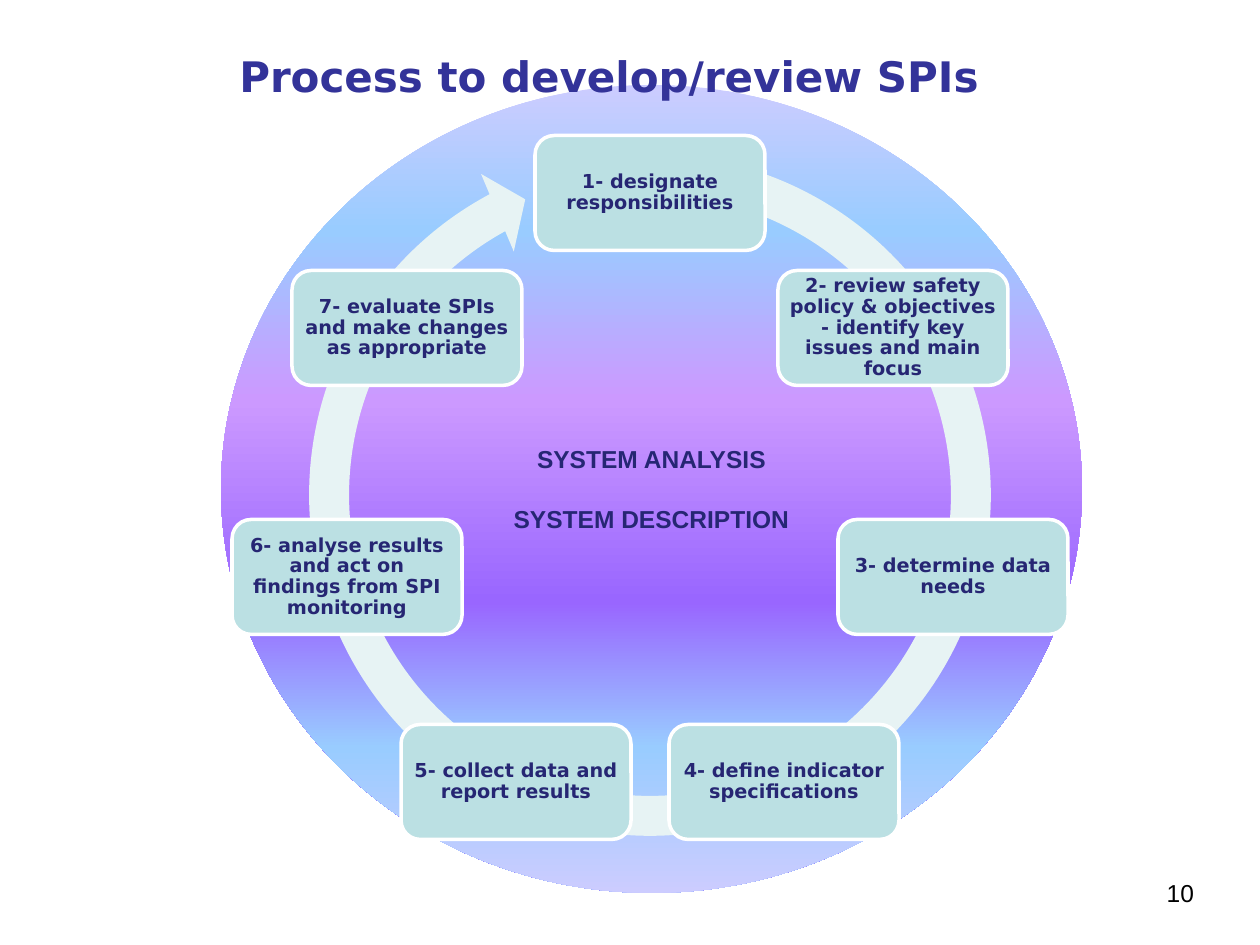
from pptx import Presentation
from pptx.dml.color import RGBColor
from pptx.enum.shapes import MSO_SHAPE
from pptx.enum.text import MSO_ANCHOR, PP_ALIGN
from pptx.oxml import parse_xml
from pptx.oxml.ns import nsdecls, qn
from pptx.util import Emu, Pt

SCALE = 914400 / 126
MID = 650
BOX_W, BOX_H = 230, 115
INK = "262673"
BANDS = [(0, "CCCCFF"), (18, "99CCFF"), (39, "CC99FF"),
         (64, "9966FF"), (82, "99CCFF"), (100, "CCCCFF")]
# Sideways offset from the middle and vertical centre of each step
STEPS = [
    (0, 193, "1- designate responsibilities"),
    (243, 328, "2- review safety policy & objectives - identify key issues and main focus"),
    (303, 577, "3- determine data needs"),
    (134, 782, "4- define indicator specifications"),
    (-134, 782, "5- collect data and report results"),
    (-303, 577, "6- analyse results and act on findings from SPI monitoring"),
    (-243, 328, "7- evaluate SPIs and make changes as appropriate"),
]


def px(n):
    return Emu(round(n * SCALE))


def color(code):
    return RGBColor.from_string(code)


def place(shape, x, y, w, h):
    shape.left, shape.top, shape.width, shape.height = map(px, (x, y, w, h))


def write(shape, *lines, size=14, font="Arial", ink=INK, bold=True,
          align=PP_ALIGN.CENTER, anchor=MSO_ANCHOR.MIDDLE,
          pad=(13, 6), gap=0, pitch=None):
    """Fill a shape with one paragraph per line; gap is space before in points."""
    frame = shape.text_frame
    frame.word_wrap = True
    frame.vertical_anchor = anchor
    frame.margin_left = frame.margin_right = px(pad[0])
    frame.margin_top = frame.margin_bottom = px(pad[1])
    for i, line in enumerate(lines):
        para = frame.add_paragraph() if i else frame.paragraphs[0]
        para.alignment = align
        para.space_before = Pt(gap if i else 0)
        if pitch:
            para.line_spacing = pitch
        run = para.add_run()
        run.text = line
        run.font.size = Pt(size)
        run.font.name = font
        run.font.bold = bold
        run.font.color.rgb = color(ink)


def add_shape(slide, kind, x, y, w, h, fill=None, line=None):
    shape = slide.shapes.add_shape(kind, px(x), px(y), px(w), px(h))
    shape.shadow.inherit = False
    if fill:
        shape.fill.solid()
        shape.fill.fore_color.rgb = color(fill)
    if line:
        shape.line.color.rgb = color(line)
        shape.line.width = Pt(2)
    else:
        shape.line.fill.background()
    return shape


def shade(shape, bands):
    """Fill a shape with colour bands running from top to bottom."""
    shape.fill.gradient()
    shape.fill.gradient_angle = 270
    stops = shape.element.spPr.find(qn("a:gradFill")).find(qn("a:gsLst"))
    for stop in list(stops):
        stops.remove(stop)
    for pos, code in bands:
        stops.append(parse_xml(
            f'<a:gs {nsdecls("a")} pos="{pos * 1000}"><a:srgbClr val="{code}"/></a:gs>'))


def add_step(slide, shift, y, text):
    box = add_shape(slide, MSO_SHAPE.ROUNDED_RECTANGLE, MID + shift - BOX_W / 2,
                    y - BOX_H / 2, BOX_W, BOX_H, "BBE0E3", "FFFFFF")
    write(box, text, size=11, font="DejaVu Sans", pad=(5, 5), pitch=0.9)


def main():
    deck = Presentation()
    deck.slide_width, deck.slide_height = px(1260), px(945)
    slide = deck.slides.add_slide(deck.slide_layouts[5])

    disc = add_shape(slide, MSO_SHAPE.OVAL, 221, 85, 861, 808)
    shade(disc, BANDS)
    write(disc, "SYSTEM ANALYSIS", "SYSTEM DESCRIPTION", gap=17.6)

    title = slide.shapes.title
    place(title, 42, 19, 1134, 113)
    write(title, "Process to develop/review SPIs", size=24, font="DejaVu Sans", ink="333399")
    # Bring the title in front of the disc
    disc.element.addnext(title.element)

    ring = add_shape(slide, MSO_SHAPE.CIRCULAR_ARROW, 287, 132, 726, 726, "E7F3F4")
    for i, value in enumerate((0.055, 3.307, 144.963, 169.614, 0.058)):
        ring.adjustments[i] = value

    for step in STEPS:
        add_step(slide, *step)

    page = slide.shapes.add_textbox(px(945), px(872), px(262), px(63))
    write(page, "10", ink="000000", bold=False, align=PP_ALIGN.RIGHT, anchor=MSO_ANCHOR.TOP)
    deck.save("out.pptx")


if __name__ == "__main__":
    main()
